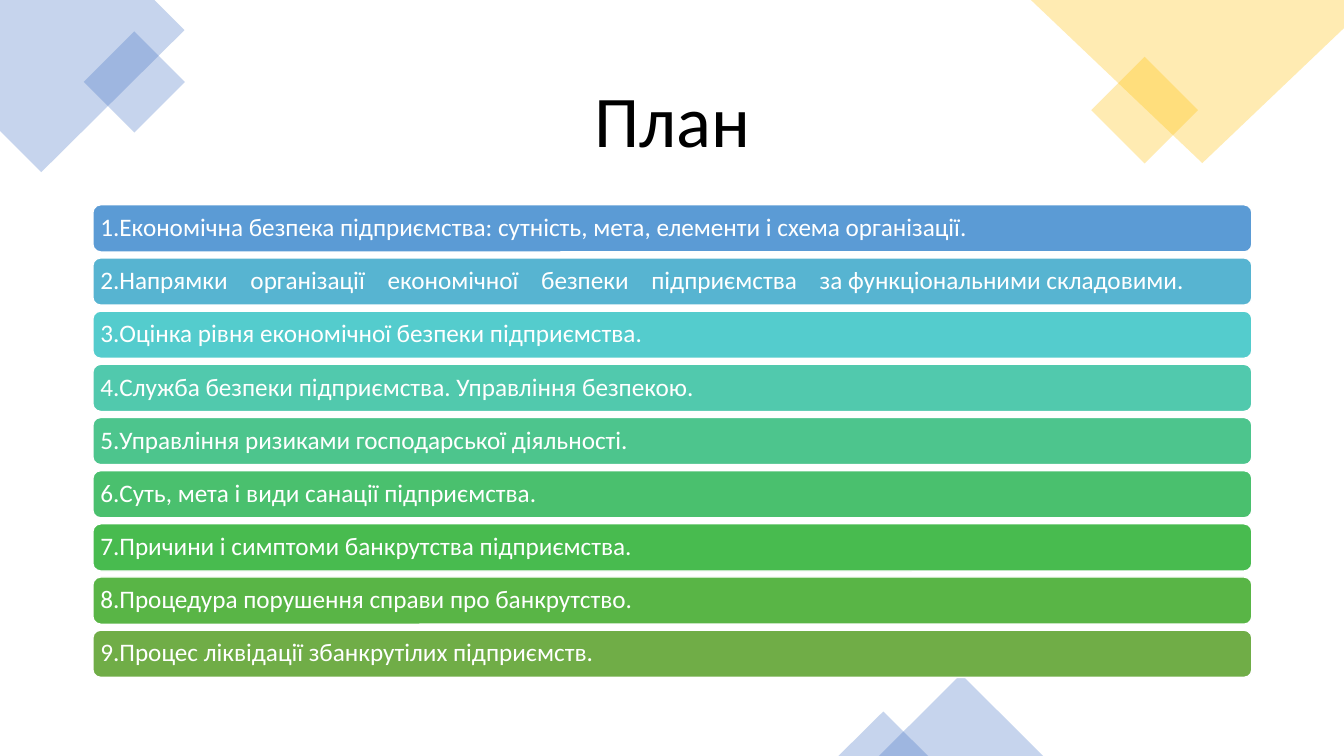
from lxml.etree import SubElement as Sub
from pptx import Presentation
from pptx.dml.color import RGBColor as RGB
from pptx.enum.shapes import MSO_SHAPE as Kind
from pptx.enum.text import MSO_ANCHOR as Anchor, PP_ALIGN as Align
from pptx.oxml.ns import qn
from pptx.util import Cm, Pt

BLUE = RGB(0x44, 0x72, 0xC4)
GOLD = RGB(0xFF, 0xC0, 0x00)
WHITE = RGB(0xFF, 0xFF, 0xFF)
BLACK = RGB(0x00, 0x00, 0x00)
FONT = "Calibri"


def tint(shape, color):
    """Fill with a 30 % opaque colour, without line or shadow."""
    shape.shadow.inherit = False
    shape.line.fill.background()
    shape.fill.solid()
    shape.fill.fore_color.rgb = color
    node = shape.fill._xPr.find(qn("a:solidFill"))[0]
    Sub(node, qn("a:alpha")).set("val", "30000")


def write(shape, text, size, color, align):
    """Put one middle-anchored line of text in a shape."""
    frame = shape.text_frame
    frame.word_wrap = True
    frame.vertical_anchor = Anchor.MIDDLE
    frame.text = text
    para = frame.paragraphs[0]
    para.alignment = align
    para.line_spacing = 0.9
    font = para.runs[0].font
    font.name, font.size, font.color.rgb = FONT, Pt(size), color


deck = Presentation()
deck.slide_width, deck.slide_height = Cm(33.87), Cm(19.05)
slide = deck.slides.add_slide(deck.slide_layouts[6])
shapes = slide.shapes

# Large corner pieces, cut off by the slide edges
corners = [
    (BLUE, [(0, 0), (3.89, 0), (4.65, 0.76), (1.04, 4.34), (0, 3.3)]),
    (GOLD, [(33.87, 0), (25.98, 0), (30.3, 4.11), (33.87, 0.71)]),
]
for color, points in corners:
    first, *rest = [(Cm(x), Cm(y)) for x, y in points]
    path = shapes.build_freeform(*first)
    path.add_line_segments(rest, close=True)
    tint(path.convert_to_shape(), color)

# Small diamonds and the triangles at the bottom
accents = [
    (Kind.DIAMOND, BLUE, 2.11, 0.79, 2.55, 2.55),
    (Kind.DIAMOND, GOLD, 27.5, 1.43, 2.69, 2.69),
    (Kind.ISOSCELES_TRIANGLE, BLUE, 22.15, 16.99, 4.14, 2.06),
    (Kind.ISOSCELES_TRIANGLE, BLUE, 21.13, 17.93, 2.26, 1.12),
]
for kind, color, *box in accents:
    tint(shapes.add_shape(kind, *map(Cm, box)), color)

# Title
LEFT, WIDTH = Cm(2.34), Cm(29.21)
title = shapes.add_textbox(LEFT, Cm(1.55), WIDTH, Cm(3.15))
write(title, "План", 52, BLACK, Align.CENTER)

# Plan items, one bar each
TOP, STEP, HEIGHT = Cm(5.16), Cm(1.34), Cm(1.19)
items = [
    ("5B9BD5", "Економічна безпека підприємства: сутність, мета, елементи і схема організації."),
    ("57B4D1", "Напрямки    організації    економічної    безпеки    підприємства    за функціональними складовими."),
    ("54CCCD", "Оцінка рівня економічної безпеки підприємства."),
    ("51C9AD", "Служба безпеки підприємства. Управління безпекою."),
    ("4DC58D", "Управління ризиками господарської діяльності."),
    ("4AC06E", "Суть, мета і види санації підприємства."),
    ("48BB4F", "Причини і симптоми банкрутства підприємства."),
    ("59B546", "Процедура порушення справи про банкрутство."),
    ("70AD47", "Процес ліквідації збанкрутілих підприємств."),
]
for i, (color, text) in enumerate(items):
    bar = shapes.add_shape(Kind.ROUNDED_RECTANGLE, LEFT, TOP + i * STEP, WIDTH, HEIGHT)
    bar.shadow.inherit = False
    bar.fill.solid()
    bar.fill.fore_color.rgb = RGB.from_string(color)
    bar.line.color.rgb = WHITE
    bar.line.width = Pt(1)
    write(bar, f"{i + 1}.{text}", 18, WHITE, Align.LEFT)
    frame = bar.text_frame
    frame.margin_left = frame.margin_right = Cm(0.13)
    frame.margin_top = frame.margin_bottom = Cm(0.18)

deck.save("out.pptx")
